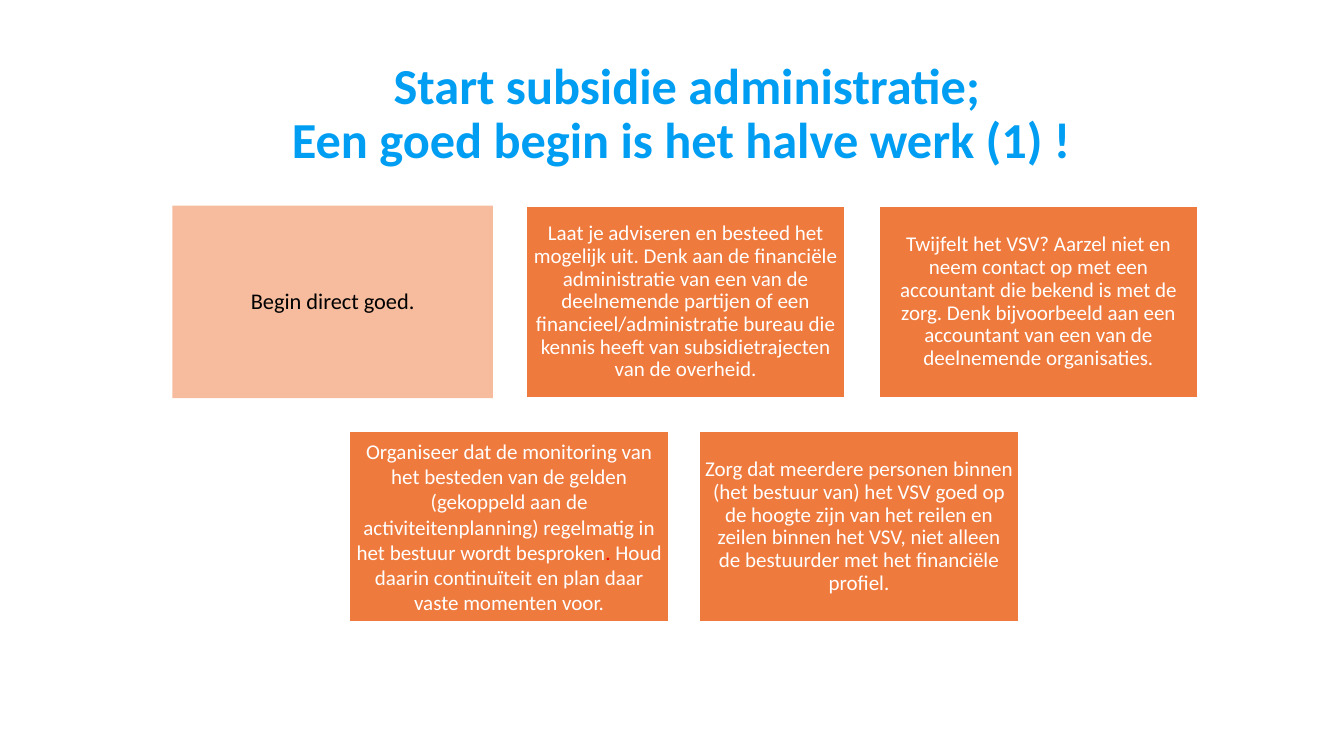
from lxml import etree
from pptx import Presentation
from pptx.dml.color import RGBColor
from pptx.enum import shapes, text
from pptx.oxml.ns import qn
from pptx.util import Inches, Pt

TITLE = ["Start subsidie administratie;", "Een goed begin is het halve werk (1) ! "]
OPENING = "Begin direct goed."
ADVICE = (
    "Laat je adviseren en besteed het mogelijk uit. Denk aan de financiële "
    "administratie van een van de deelnemende partijen of een "
    "financieel/administratie bureau die kennis heeft van subsidietrajecten "
    "van de overheid."
)
ACCOUNTANT = (
    "Twijfelt het VSV? Aarzel niet en neem contact op met een accountant die "
    "bekend is met de zorg. Denk bijvoorbeeld aan een accountant van een van "
    "de deelnemende organisaties."
)
MONITORING = (
    "Organiseer dat de monitoring van het besteden van de gelden (gekoppeld "
    "aan de activiteitenplanning) regelmatig in het bestuur wordt besproken"
)
CONTINUITY = "Houd daarin continuïteit en plan daar vaste momenten voor."
BOARD = (
    "Zorg dat meerdere personen binnen (het bestuur van) het VSV goed op de "
    "hoogte zijn van het reilen en zeilen binnen het VSV, niet alleen de "
    "bestuurder met het financiële profiel."
)

THEME = {
    "font": "Calibri",
    "title": "009EF3", "card": "EF7A3D", "light": "FFFFFF",
    "dark": "000000", "accent": "FF0000",
    "title_size": 36, "opening_size": 16, "card_size": 15,
}

# Each card: runs of (text, colour name), and its format
CARD = {"size": "card_size", "inset": 0.06, "spacing": 0.9, "opacity": 100}
ROWS = [
    {"left": 1.71, "top": 2.04, "step": 3.5, "cards": [
        ([(OPENING, "dark")],
         {**CARD, "size": "opening_size", "inset": 0.07, "opacity": 50}),
        ([(ADVICE, "light")], CARD),
        ([(ACCOUNTANT, "light")], CARD),
    ]},
    {"left": 3.46, "top": 4.27, "step": 3.47, "cards": [
        ([(MONITORING, "light"), (". ", "accent"), (CONTINUITY, "light")],
         {**CARD, "spacing": 1.0}),
        ([(BOARD, "light")], CARD),
    ]},
]
CARD_WIDTH, CARD_HEIGHT = 3.18, 1.91


def colour(name):
    return RGBColor.from_string(THEME[name])


def prepare_frame(box, inset, spacing):
    """Set the box's text layout and return its first paragraph."""
    frame = box.text_frame
    layout = {"word_wrap": True, "vertical_anchor": text.MSO_ANCHOR.MIDDLE}
    for side in ("left", "top", "right", "bottom"):
        layout[f"margin_{side}"] = Inches(inset)
    for name, value in layout.items():
        setattr(frame, name, value)
    para = frame.paragraphs[0]
    para.alignment = text.PP_ALIGN.CENTER
    para.line_spacing = spacing
    return para


def add_span(para, words, size, colour_name, bold=False):
    span = para.add_run()
    span.text = words
    looks = {"name": THEME["font"], "size": Pt(THEME[size]), "bold": bold}
    for name, value in looks.items():
        setattr(span.font, name, value)
    span.font.color.rgb = colour(colour_name)


def add_title(page):
    box = page.shapes.add_textbox(
        Inches(1.71), Inches(0.93), Inches(10.21), Inches(0.43))
    para = prepare_frame(box, 0, 0.9)
    for index, line in enumerate(TITLE):
        if index:
            para.add_line_break()
        add_span(para, line, "title_size", "title", bold=True)


def add_card(page, left, top, spans, style):
    box = page.shapes.add_shape(
        shapes.MSO_SHAPE.RECTANGLE, Inches(left), Inches(top),
        Inches(CARD_WIDTH), Inches(CARD_HEIGHT))
    box.shadow.inherit = False
    box.fill.solid()
    box.fill.fore_color.rgb = colour("card")
    if style["opacity"] < 100:
        tint = box.fill._xPr.find(".//" + qn("a:srgbClr"))
        etree.SubElement(tint, qn("a:alpha"), val=str(style["opacity"] * 1000))
        box.line.fill.background()
    else:
        box.line.color.rgb = colour("light")
        box.line.width = Pt(2)
    para = prepare_frame(box, style["inset"], style["spacing"])
    for words, colour_name in spans:
        add_span(para, words, style["size"], colour_name)


def main():
    deck = Presentation()
    deck.slide_width, deck.slide_height = Inches(13.33), Inches(7.5)
    page = deck.slides.add_slide(deck.slide_layouts[6])
    add_title(page)
    for row in ROWS:
        for column, (spans, style) in enumerate(row["cards"]):
            left = row["left"] + column * row["step"]
            add_card(page, left, row["top"], spans, style)
    deck.save("out.pptx")


if __name__ == "__main__":
    main()
